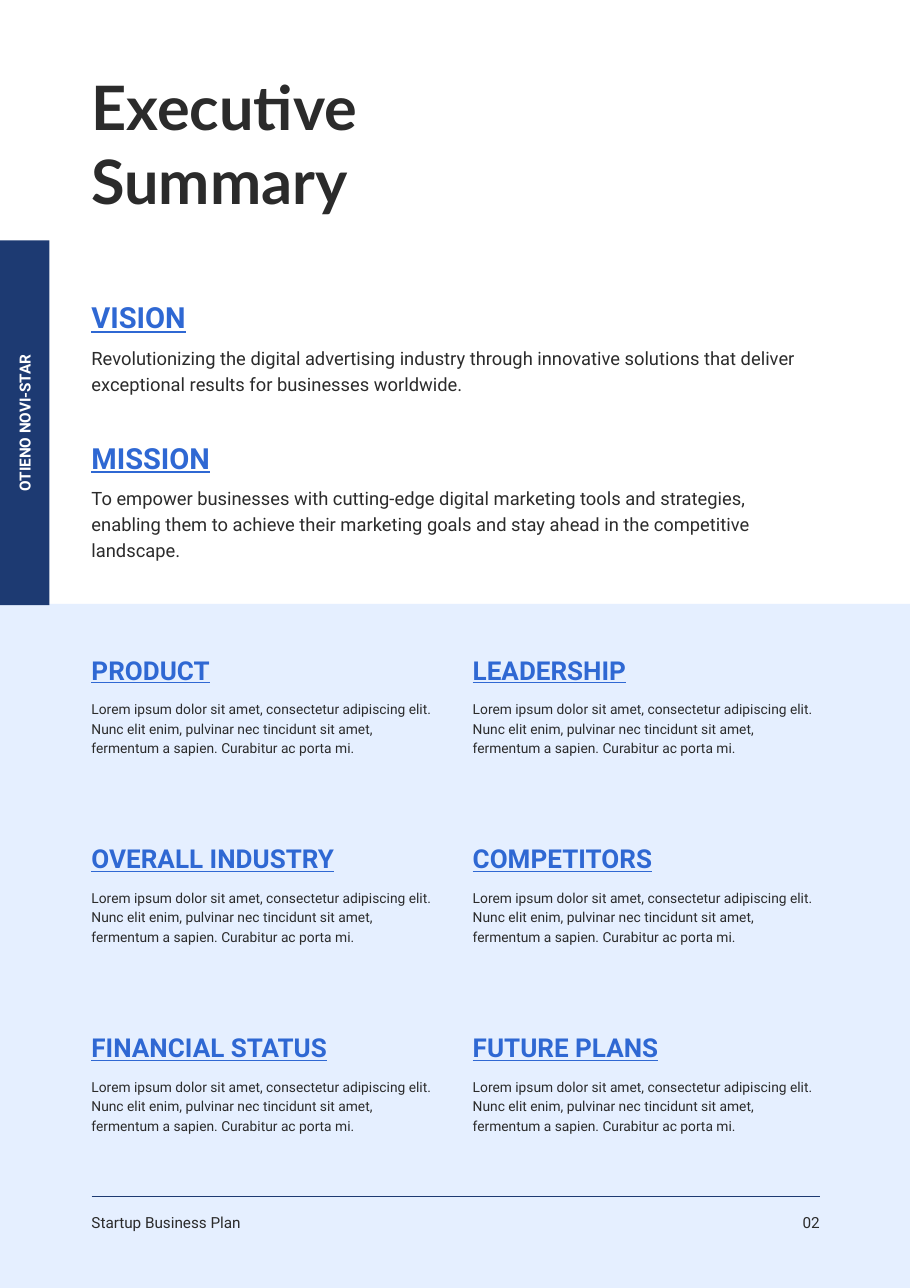
from dataclasses import dataclass

from pptx import Presentation
from pptx.dml.color import RGBColor
from pptx.enum.shapes import MSO_CONNECTOR, MSO_SHAPE
from pptx.enum.text import MSO_AUTO_SIZE, PP_ALIGN
from pptx.oxml.ns import qn
from pptx.shapes.autoshape import Shape
from pptx.slide import Slide
from pptx.util import Cm, Pt


@dataclass(frozen=True)
class Style:
    size: float
    lead: float
    color: str
    font: str = "Roboto"
    bold: bool = False
    under: bool = False


@dataclass(frozen=True)
class Theme:
    navy: str = "1D3A72"
    pale: str = "E5EFFF"
    title: Style = Style(40, 48, "2B2B2B", "Lato", bold=True)
    head: Style = Style(19, 26.6, "2F68D3", bold=True, under=True)
    lead: Style = Style(12, 16.8, "2B2B2B")
    topic: Style = Style(17, 23.8, "2F68D3", bold=True, under=True)
    body: Style = Style(9, 12.6, "2B2B2B")
    foot: Style = Style(10, 14, "2B2B2B")
    side: Style = Style(10, 14, "FFFFFF", bold=True)


@dataclass(frozen=True)
class Block:
    head: str
    body: str
    lines: int


THEME = Theme()
WIDTH, HEIGHT = 20.98, 29.69
LEFT, SPAN = 2.11, 16.79
RIGHT = LEFT + SPAN
PANEL_TOP = 13.92
BODY_DROP = 1.14
GOAL_TOP, GOAL_STEP = 6.78, 3.23
GRID_TOP, ROW_STEP, COL_STEP, COL_WIDTH = 14.96, 4.35, 8.79, 8
RULE_TOP, FOOT_TOP, FOOT_WIDTH = 27.58, 27.89, 5.18

GOALS = [
    Block("VISION", "Revolutionizing the digital advertising industry through "
          "innovative solutions that deliver exceptional results for "
          "businesses worldwide.", 2),
    Block("MISSION", "To empower businesses with cutting-edge digital marketing "
          "tools and strategies, enabling them to achieve their marketing goals "
          "and stay ahead in the competitive landscape.", 3),
]
TOPICS = ["PRODUCT", "LEADERSHIP", "OVERALL INDUSTRY", "COMPETITORS",
          "FINANCIAL STATUS", "FUTURE PLANS"]
LOREM = ("Lorem ipsum dolor sit amet, consectetur adipiscing elit. Nunc elit "
         "enim, pulvinar nec tincidunt sit amet, fermentum a sapien. "
         "Curabitur ac porta mi.")


def add_panel(slide: Slide, left: float, top: float, width: float,
              height: float, color: str) -> None:
    panel = slide.shapes.add_shape(MSO_SHAPE.RECTANGLE, Cm(left), Cm(top),
                                   Cm(width), Cm(height))
    panel.shadow.inherit = False
    panel.fill.solid()
    panel.fill.fore_color.rgb = RGBColor.from_string(color)
    panel.line.fill.background()


def add_text(slide: Slide, text: str, left: float, top: float, width: float,
             style: Style, lines: int = 1,
             align: PP_ALIGN = PP_ALIGN.LEFT) -> Shape:
    """Place text in a box as tall as its number of lines."""
    box = slide.shapes.add_textbox(Cm(left), Cm(top), Cm(width),
                                   Pt(style.lead * lines))
    frame = box.text_frame
    frame.margin_left = frame.margin_right = 0
    frame.margin_top = frame.margin_bottom = 0
    frame.word_wrap = True
    frame.auto_size = MSO_AUTO_SIZE.SHAPE_TO_FIT_TEXT
    frame.text = text
    for para in frame.paragraphs:
        para.alignment = align
        para.line_spacing = Pt(style.lead)
        font = para.font
        font.name = style.font
        font.size = Pt(style.size)
        font.bold = style.bold
        font.underline = style.under
        font.color.rgb = RGBColor.from_string(style.color)
    return box


def add_block(slide: Slide, block: Block, left: float, top: float,
              widths: tuple[float, float], styles: tuple[Style, Style]) -> None:
    """Place a heading with its body; widths and styles go in that order."""
    add_text(slide, block.head, left, top, widths[0], styles[0])
    add_text(slide, block.body, left, top + BODY_DROP, widths[1], styles[1],
             block.lines)


def add_rule(slide: Slide) -> None:
    rule = slide.shapes.add_connector(MSO_CONNECTOR.STRAIGHT, Cm(LEFT),
                                      Cm(RULE_TOP), Cm(RIGHT), Cm(RULE_TOP))
    rule.line.width = Pt(0.75)
    rule.line.color.rgb = RGBColor.from_string(THEME.navy)
    props = rule.element.spPr
    props.append(props.makeelement(qn("a:effectLst"), {}))


def main() -> None:
    deck = Presentation()
    deck.slide_width, deck.slide_height = Cm(WIDTH), Cm(HEIGHT)
    slide = deck.slides.add_slide(deck.slide_layouts[6])

    add_panel(slide, 0, PANEL_TOP, WIDTH, HEIGHT - PANEL_TOP, THEME.pale)
    add_panel(slide, 0, 5.54, 1.14, 8.41, THEME.navy)
    side = add_text(slide, "OTIENO NOVI-STAR", -3.05, 9.5, 7.16, THEME.side,
                    align=PP_ALIGN.CENTER)
    side.rotation = 270

    add_text(slide, "Executive\nSummary", LEFT, 1.6, SPAN, THEME.title, 2)
    for row, goal in enumerate(GOALS):
        add_block(slide, goal, LEFT, GOAL_TOP + row * GOAL_STEP,
                  (9.91, SPAN), (THEME.head, THEME.lead))
    for index, topic in enumerate(TOPICS):
        row, col = divmod(index, 2)
        add_block(slide, Block(topic, LOREM, 3), LEFT + col * COL_STEP,
                  GRID_TOP + row * ROW_STEP, (COL_WIDTH, COL_WIDTH),
                  (THEME.topic, THEME.body))

    add_rule(slide)
    add_text(slide, "Startup Business Plan", LEFT, FOOT_TOP, FOOT_WIDTH,
             THEME.foot)
    add_text(slide, "02", RIGHT - FOOT_WIDTH, FOOT_TOP, FOOT_WIDTH, THEME.foot,
             align=PP_ALIGN.RIGHT)
    deck.save("out.pptx")


if __name__ == "__main__":
    main()
